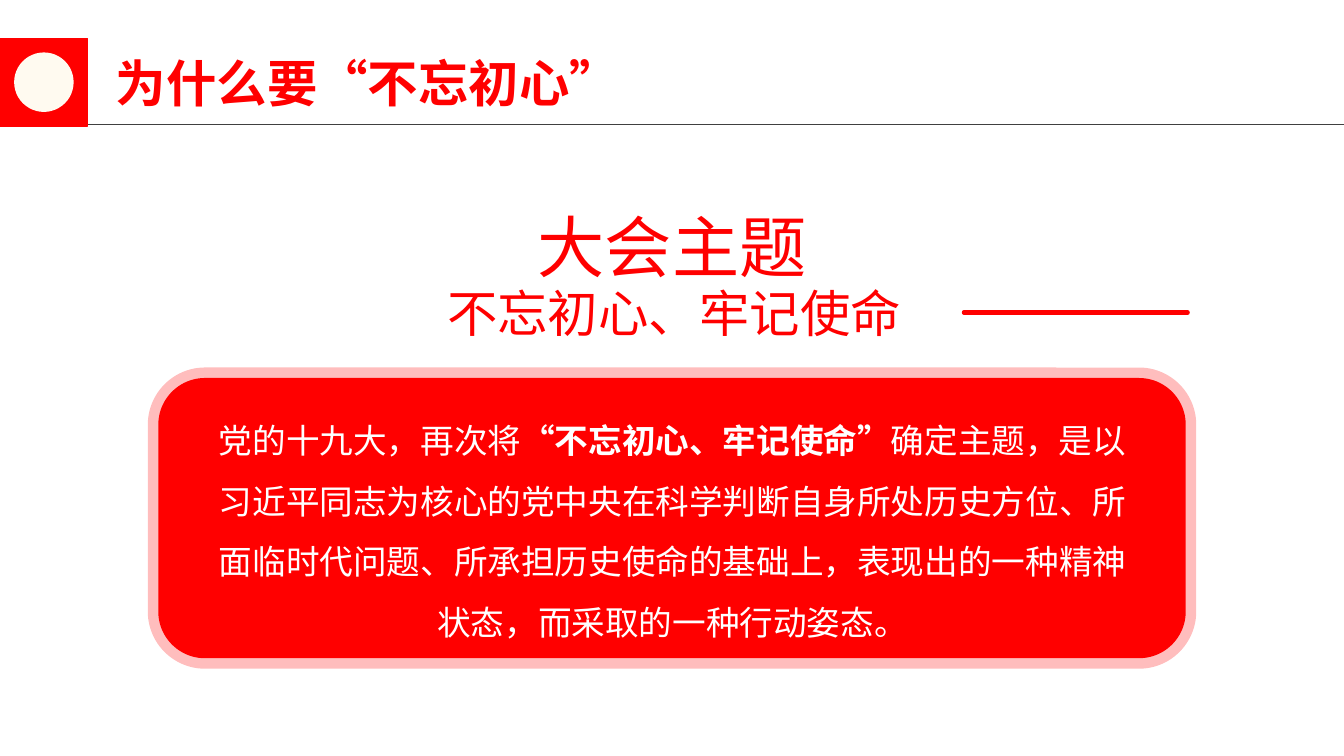
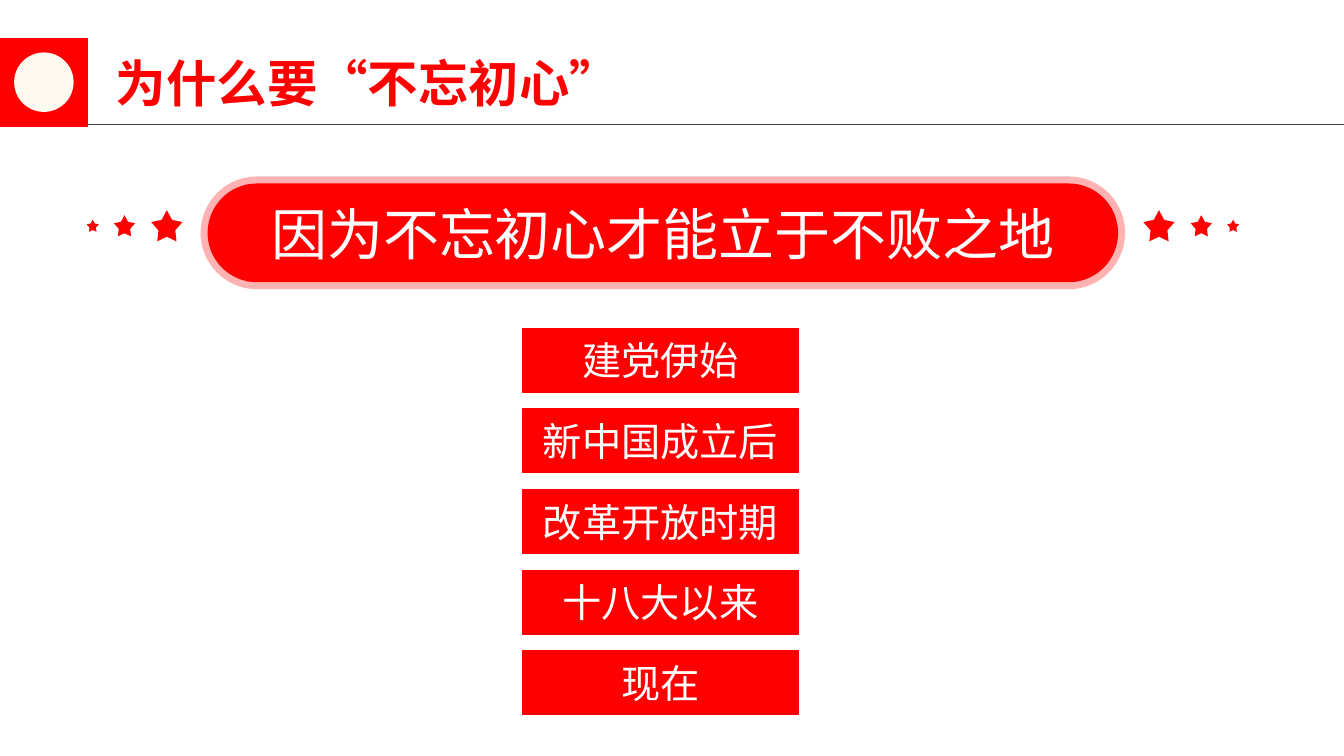
from typing import NamedTuple, Optional

from lxml.etree import SubElement
from pptx import Presentation
from pptx.dml.color import RGBColor
from pptx.enum.lang import MSO_LANGUAGE_ID
from pptx.enum.shapes import MSO_CONNECTOR, MSO_SHAPE
from pptx.enum.text import MSO_ANCHOR, PP_ALIGN
from pptx.oxml.ns import qn
from pptx.util import Inches, Pt

COLORS = {"red": "FF0000", "white": "FFFFFF", "cream": "FFFAF0", "rule": "404040"}
FONT = "Noto Sans CJK SC"
SLIDE_W, SLIDE_H = 13.33, 7.5
HEADER_TOP, HEADER_SIZE = 0.38, 0.87
BANNER_LEFT, BANNER_W = 2.06, 9.03
STAR_MIDDLE = 2.24
PERIOD_TOP, PERIOD_PITCH = 3.26, 0.8
PERIODS = ["建党伊始", "新中国成立后", "改革开放时期", "十八大以来", "现在"]


class Box(NamedTuple):
    left: float
    top: float
    width: float
    height: float


class Border(NamedTuple):
    width: float
    opacity: int = 100


class Star(NamedTuple):
    left: float
    size: float


STARS = [Star(1.5, 0.31), Star(1.13, 0.21), Star(0.86, 0.12)]


def rgb(name: str) -> RGBColor:
    return RGBColor.from_string(COLORS[name])


def write(tf, *texts: str, size: float, color: str = "white", bold: tuple = (),
          align: PP_ALIGN = PP_ALIGN.CENTER, spacing: float = 1.0,
          wrap: bool = True, anchor: MSO_ANCHOR = MSO_ANCHOR.TOP) -> None:
    tf.word_wrap = wrap
    tf.vertical_anchor = anchor
    p = tf.paragraphs[0]
    p.alignment = align
    p.line_spacing = spacing
    for i, text in enumerate(texts):
        r = p.add_run()
        r.text = text
        r.font.size = Pt(size)
        r.font.bold = i in bold
        r.font.color.rgb = rgb(color)
        r.font.name = FONT
        r.font.language_id = MSO_LANGUAGE_ID.SIMPLIFIED_CHINESE
        SubElement(r.font._element, qn("a:ea"), typeface=FONT)


def add_text(s, box: Box, *texts: str, **fmt) -> None:
    write(s.shapes.add_textbox(*map(Inches, box)).text_frame, *texts, **fmt)


def add_shape(s, kind: MSO_SHAPE, box: Box, color: str = "red",
              border: Optional[Border] = None):
    sp = s.shapes.add_shape(kind, *map(Inches, box))
    sp.shadow.inherit = False
    sp.fill.solid()
    sp.fill.fore_color.rgb = rgb(color)
    if border is None:
        sp.line.fill.background()
        return sp
    sp.line.color.rgb = rgb(color)
    sp.line.width = Pt(border.width)
    if border.opacity < 100:
        clr = sp.line._ln.find(".//" + qn("a:srgbClr"))
        SubElement(clr, qn("a:alpha"), val=str(border.opacity * 1000))
    return sp


def add_line(s, left: float, right: float, y: float, color: str, width: float):
    line = s.shapes.add_connector(MSO_CONNECTOR.STRAIGHT, Inches(left), Inches(y),
                                  Inches(right), Inches(y))
    line.line.color.rgb = rgb(color)
    line.line.width = Pt(width)
    SubElement(line._element.spPr, qn("a:effectLst"))
    return line


def new_slide(prs, title: str):
    s = prs.slides.add_slide(prs.slide_layouts[6])
    add_line(s, HEADER_SIZE, SLIDE_W, 1.24, "rule", 0.75)
    add_shape(s, MSO_SHAPE.RECTANGLE, Box(0, HEADER_TOP, HEADER_SIZE, HEADER_SIZE),
              border=Border(1))
    add_shape(s, MSO_SHAPE.OVAL, Box(0.14, 0.52, 0.59, 0.59), "cream")
    add_text(s, Box(1.05, 0.47, 5.25, 0.71), title, size=36, color="red",
             bold=(0,), align=PP_ALIGN.LEFT, wrap=False)
    return s


def theme_slide(prs) -> None:
    s = new_slide(prs, "为什么要“不忘初心”")
    add_shape(s, MSO_SHAPE.ROUNDED_RECTANGLE, Box(1.57, 3.75, 10.19, 2.78),
              border=Border(15, 25))
    add_text(s, Box(1.96, 3.92, 9.42, 2.52),
             "党的十九大，再次将", "“不忘初心、牢记使命”",
             "确定主题，是以习近平同志为核心的党中央在科学判断自身所处历史方位、"
             "所面临时代问题、所承担历史使命的基础上，表现出的一种精神状态，"
             "而采取的一种行动姿态。",
             size=24, bold=(1,), spacing=1.5)
    add_text(s, Box(1.57, 1.59, 10.19, 1.17), "大会主题", size=48, color="red",
             spacing=1.5)
    add_text(s, Box(4.31, 2.75, 4.75, 0.71), "不忘初心、牢记使命", size=36,
             color="red", wrap=False)
    line = add_line(s, 9.56, 11.78, 3.1, "red", 3)
    line.line._ln.set("cap", "rnd")


def reasons_slide(prs) -> None:
    s = new_slide(prs, "为什么要“不忘初心”")
    banner = add_shape(s, MSO_SHAPE.ROUNDED_RECTANGLE,
                       Box(BANNER_LEFT, 1.82, BANNER_W, 0.98), border=Border(10, 30))
    banner.adjustments[0] = 0.5
    write(banner.text_frame, "因为不忘初心才能立于不败之地", size=40,
          anchor=MSO_ANCHOR.MIDDLE)
    for star in STARS:
        mirrored = 2 * BANNER_LEFT + BANNER_W - star.left - star.size
        for left in (star.left, mirrored):
            sp = add_shape(s, MSO_SHAPE.STAR_5_POINT,
                           Box(left, STAR_MIDDLE - star.size / 2, star.size, star.size))
            sp.adjustments[0] = 0.27
    for i, period in enumerate(PERIODS):
        sp = add_shape(s, MSO_SHAPE.RECTANGLE,
                       Box(5.18, PERIOD_TOP + i * PERIOD_PITCH, 2.74, 0.63),
                       border=Border(1))
        write(sp.text_frame, period, size=28, anchor=MSO_ANCHOR.MIDDLE)


def main() -> None:
    prs = Presentation()
    prs.slide_width, prs.slide_height = Inches(SLIDE_W), Inches(SLIDE_H)
    theme_slide(prs)
    reasons_slide(prs)
    prs.save("out.pptx")


if __name__ == "__main__":
    main()
